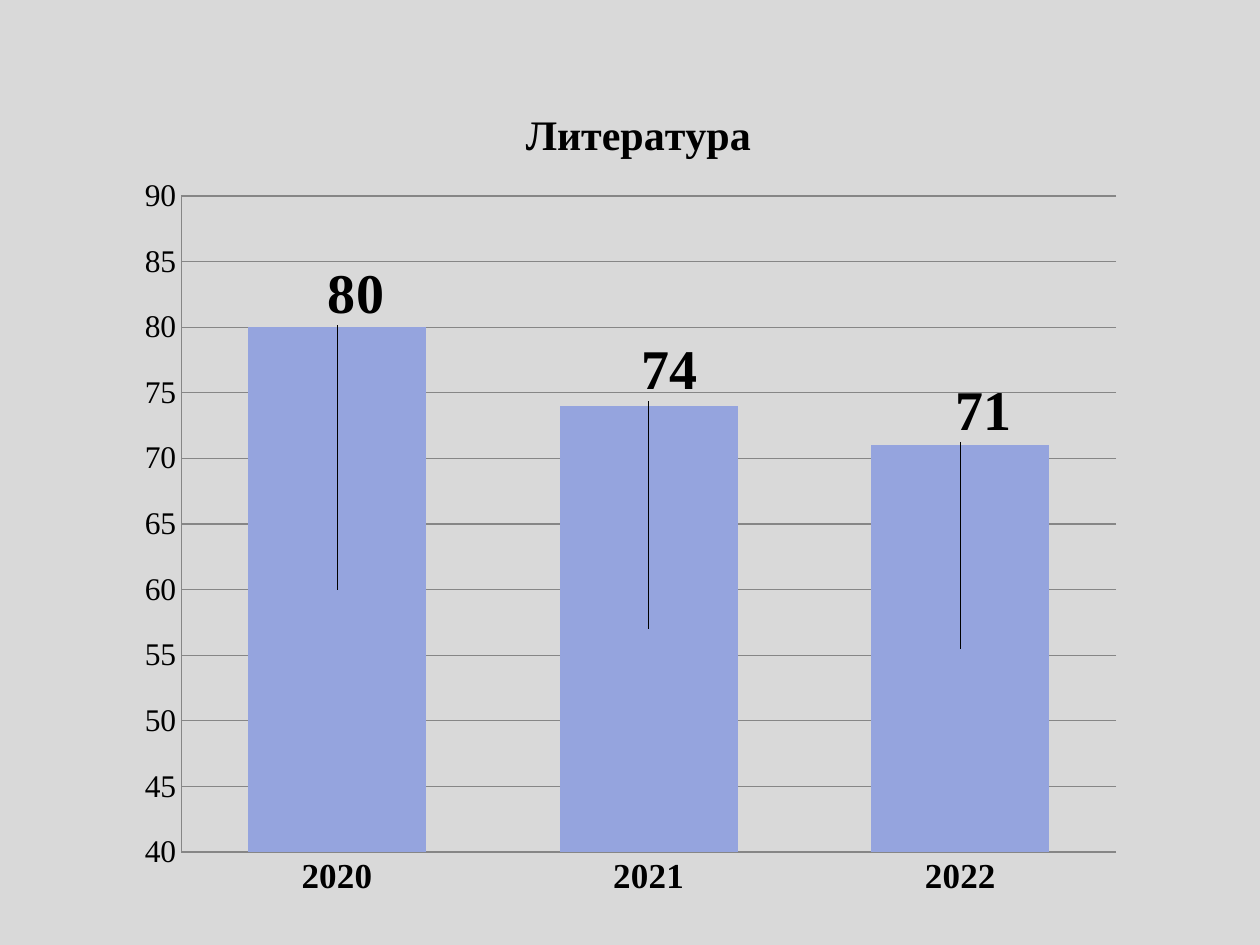
"""Build a slide with a column chart of literature results by year."""
import pptx
import pptx.chart.data
import pptx.dml.color
import pptx.enum.chart
import pptx.oxml
import pptx.oxml.ns
import pptx.util
from pptx.util import Cm


def color(value):
    return pptx.dml.color.RGBColor.from_string(value)


def manual_layout(**settings):
    parts = "".join(f'<c:{key} val="{value}"/>' for key, value in settings.items())
    return pptx.oxml.parse_xml(
        f'<c:layout {pptx.oxml.ns.nsdecls("c")}><c:manualLayout>{parts}</c:manualLayout></c:layout>'
    )


presentation = pptx.Presentation()
presentation.slide_width = Cm(25.4)
presentation.slide_height = Cm(19.05)
slide = presentation.slides.add_slide(presentation.slide_layouts[6])
slide.background.fill.solid()
slide.background.fill.fore_color.rgb = color("D9D9D9")

results = pptx.chart.data.CategoryChartData()
results.categories = ["2020", "2021", "2022"]
results.add_series("Литература", [80, 74, 71])
chart = slide.shapes.add_chart(
    pptx.enum.chart.XL_CHART_TYPE.COLUMN_STACKED,
    Cm(2.49), Cm(1.32), Cm(20.4), Cm(17.09), results,
).chart
chart.has_legend = False
chart.font.name = "Times New Roman"
chart.font.size = pptx.util.Pt(18)
chart.font.color.rgb = color("000000")

chart.has_title = True
heading = chart.chart_title.text_frame.paragraphs[0]
heading.text = "Литература"
heading.font.name = "Times New Roman"
heading.font.size = pptx.util.Pt(24)
heading.font.bold = True
heading.font.color.rgb = color("000000")
chart.chart_title.include_in_layout = False
for old_layout in chart._chartSpace.xpath("c:chart/c:title/c:layout | c:chart/c:plotArea/c:layout"):
    old_layout.getparent().remove(old_layout)
chart._chartSpace.xpath("c:chart/c:title/c:tx")[0].addnext(
    manual_layout(xMode="edge", yMode="edge", x=0.39, y=0.04)
)
chart._chartSpace.xpath("c:chart/c:plotArea")[0].insert(
    0,
    manual_layout(layoutTarget="inner", xMode="edge", yMode="edge", x=0.057, y=0.154, w=0.924, h=0.774),
)

years, scores = chart.category_axis, chart.value_axis
scores.minimum_scale = 40
scores.maximum_scale = 90
scores.major_unit = 5
scores.has_major_gridlines = True
years.tick_labels.font.size = pptx.util.Pt(20)
years.tick_labels.font.bold = True
for axis in (years, scores):
    axis.major_tick_mark = pptx.enum.chart.XL_TICK_MARK.NONE
    axis.minor_tick_mark = pptx.enum.chart.XL_TICK_MARK.NONE
for line in (years.format.line, scores.format.line, scores.major_gridlines.format.line):
    line.color.rgb = color("868686")
    line.width = pptx.util.Pt(0.75)

columns = chart.plots[0]
columns.gap_width = 75
columns.overlap = 100
columns.vary_by_categories = False
literature = columns.series[0]
literature.format.fill.solid()
literature.format.fill.fore_color.rgb = color("95A4DE")
literature.data_labels.show_value = True
literature.data_labels.font.size = pptx.util.Pt(32)
literature.data_labels.font.bold = True

for index, (x, y) in enumerate([(0.019, -0.348), (0.021, -0.305), (0.023, -0.28)]):
    label_font = literature.points[index].data_label.font
    label_font.size = pptx.util.Pt(32)
    label_font.bold = True
    label_idx = chart._chartSpace.xpath(f"//c:dLbl/c:idx[@val='{index}']")[0]
    label_idx.addnext(manual_layout(x=x, y=y))

presentation.save("out.pptx")
